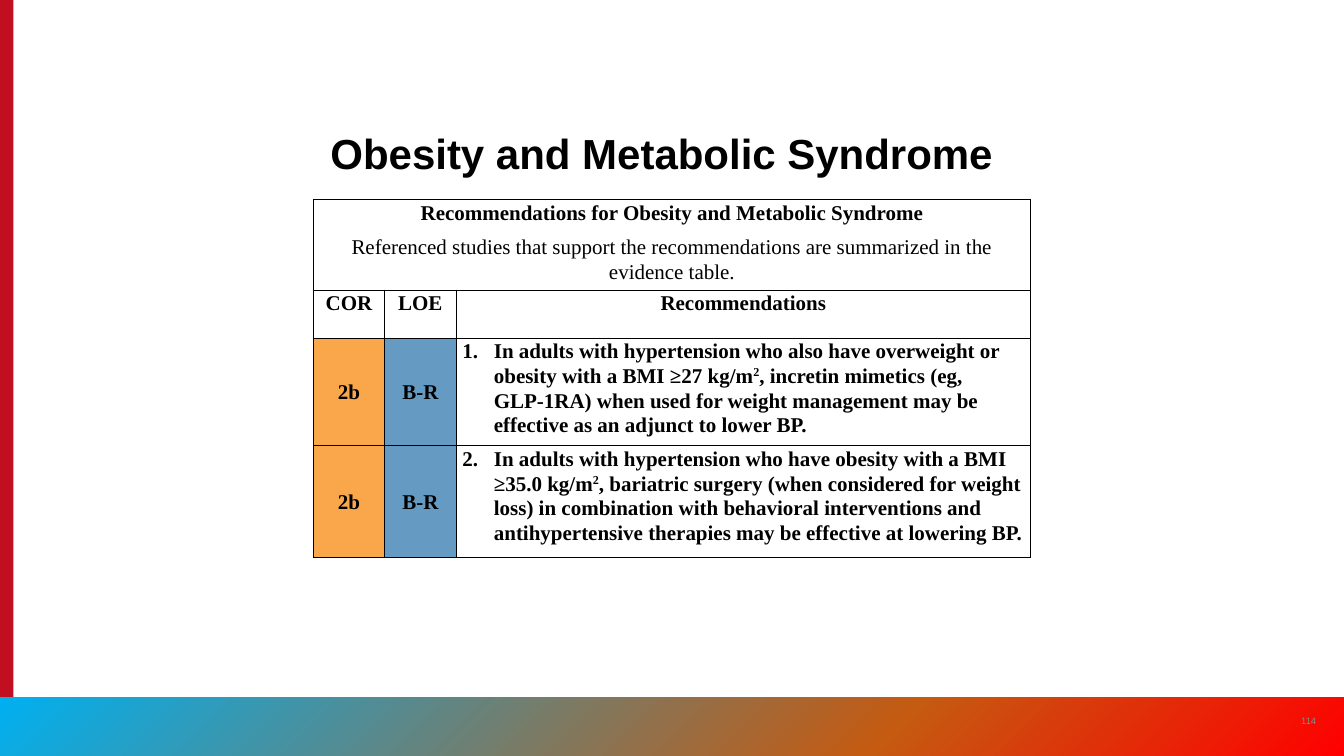
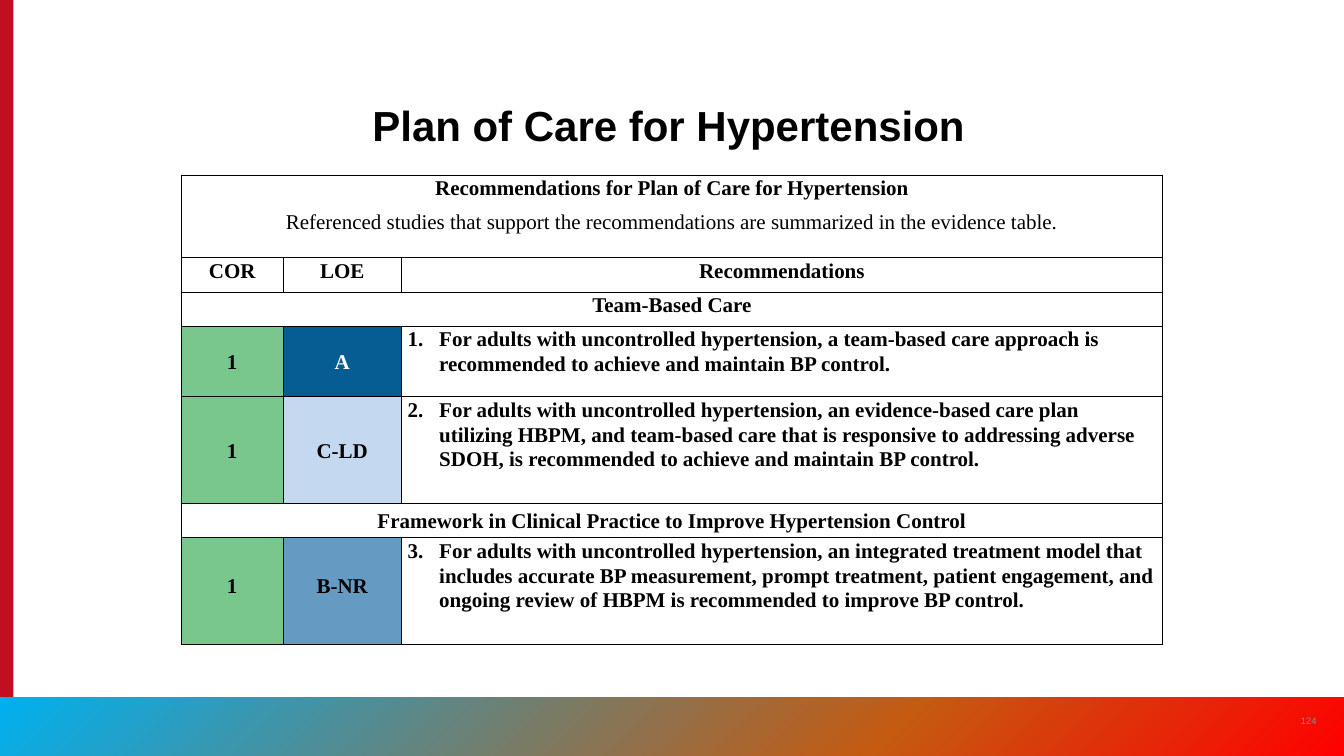
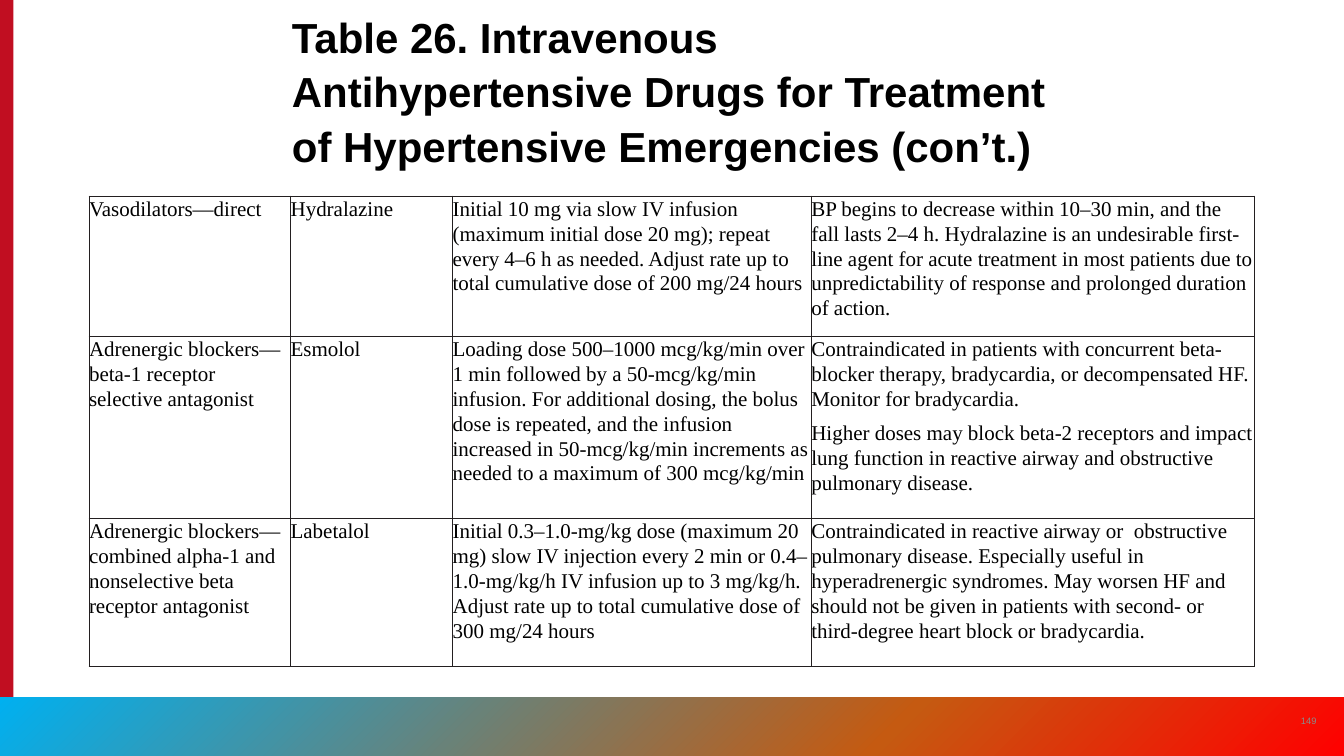
from copy import deepcopy

from lxml import etree
from pptx import Presentation
from pptx.dml.color import RGBColor
from pptx.enum.shapes import MSO_SHAPE
from pptx.enum.text import MSO_ANCHOR, MSO_AUTO_SIZE, PP_ALIGN
from pptx.oxml.ns import qn
from pptx.util import Pt

RECTANGLE = MSO_SHAPE.RECTANGLE
TOP, MIDDLE, BOTTOM = MSO_ANCHOR.TOP, MSO_ANCHOR.MIDDLE, MSO_ANCHOR.BOTTOM
LEFT, CENTER = PP_ALIGN.LEFT, PP_ALIGN.CENTER

COLORS = {
    "black": "000000", "white": "FFFFFF", "grey": "8A8B8A", "ink": "231F20",
    "side bar": "C10E21", "blue": "00B0F0", "rust": "C55A11", "red": "FF0000",
}
BAND_STOPS = [(0, "blue"), (0.66, "rust"), (1, "red")]
RATING_FILLS = {
    "1": "79C78D", "2b": "FAA74B",
    "A": "065D93", "B-R": "659BC2", "B-NR": "659BC2", "C-LD": "C4D9F0",
}
SIDE_BAR_WIDTH = 11.5
BAND_TOP = 597.6
HANGING = 27
CELL_INSET = 5.4

EVIDENCE_NOTE = "Referenced studies that support the recommendations are summarized in the evidence table."
COLUMN_HEADS = ["COR", "LOE", "Recommendations"]

recommendation_slides = [
    {
        "page": "114",
        "title": "Obesity and Metabolic Syndrome",
        "title_box": (276, 102, 600, 54),
        "origin": (268.5, 171.4),
        "columns": [61.2, 61.2, 492.5],
        "rows": [
            (75.6, TOP, 0, ["Recommendations for Obesity and Metabolic Syndrome"]),
            (41, TOP, 0, COLUMN_HEADS),
            (87.8, MIDDLE, 0, ["2b", "B-R", "In adults with hypertension who also have overweight or obesity with a BMI ≥27 kg/m^2^, incretin mimetics (eg, GLP-1RA) when used for weight management may be effective as an adjunct to lower BP."]),
            (95.8, MIDDLE, 0, ["2b", "B-R", "In adults with hypertension who have obesity with a BMI ≥35.0 kg/m^2^, bariatric surgery (when considered for weight loss) in combination with behavioral interventions and antihypertensive therapies may be effective at lowering BP."]),
        ],
    },
    {
        "page": "124",
        "title": "Plan of Care for Hypertension",
        "title_box": (312, 78, 528, 54),
        "origin": (155.5, 150),
        "columns": [87.1, 101.5, 652.3],
        "rows": [
            (71, TOP, 0, ["Recommendations for Plan of Care for Hypertension"]),
            (29.5, TOP, 0, COLUMN_HEADS),
            (29.5, TOP, 0, ["Team-Based Care"]),
            (60.2, MIDDLE, 0, ["1", "A", "For adults with uncontrolled hypertension, a team-based care approach is recommended to achieve and maintain BP control."]),
            (91.4, MIDDLE, 0, ["1", "C-LD", "For adults with uncontrolled hypertension, an evidence-based care plan utilizing HBPM, and team-based care that is responsive to addressing adverse SDOH, is recommended to achieve and maintain BP control."]),
            (29.5, MIDDLE, 0, ["Framework in Clinical Practice to Improve Hypertension Control"]),
            (91.4, MIDDLE, 10, ["1", "B-NR", "For adults with uncontrolled hypertension, an integrated treatment model that includes accurate BP measurement, prompt treatment, patient engagement, and ongoing review of HBPM is recommended to improve BP control."]),
        ],
    },
]

DRUG_ROW_HEIGHTS = [120.2, 156, 126.7]
drugs = [
    [
        ["Vasodilators—direct"],
        ["Hydralazine"],
        ["Initial 10 mg via slow IV infusion (maximum initial dose 20 mg); repeat every 4–6 h as needed. Adjust rate up to total cumulative dose of 200 mg/24 hours"],
        ["BP begins to decrease within 10–30 min, and the fall lasts 2–4 h. Hydralazine is an undesirable first-line agent for acute treatment in most patients due to unpredictability of response and prolonged duration of action."],
    ],
    [
        ["Adrenergic blockers—beta-1 receptor selective antagonist"],
        ["Esmolol"],
        ["Loading dose 500–1000 mcg/kg/min over 1 min followed by a 50-mcg/kg/min infusion. For additional dosing, the bolus dose is repeated, and the infusion increased in 50-mcg/kg/min increments as needed to a maximum of 300 mcg/kg/min"],
        [
            "Contraindicated in patients with concurrent beta-blocker therapy, bradycardia, or decompensated HF. Monitor for bradycardia.",
            "Higher doses may block beta-2 receptors and impact lung function in reactive airway and obstructive pulmonary disease.",
        ],
    ],
    [
        ["Adrenergic blockers—combined alpha-1 and nonselective beta receptor antagonist"],
        ["Labetalol"],
        ["Initial 0.3–1.0-mg/kg dose (maximum 20 mg) slow IV injection every 2 min or 0.4–1.0-mg/kg/h IV infusion up to 3 mg/kg/h. Adjust rate up to total cumulative dose of 300 mg/24 hours"],
        ["Contraindicated in reactive airway or  obstructive pulmonary disease. Especially useful in hyperadrenergic syndromes. May worsen HF and should not be given in patients with second- or third-degree heart block or bradycardia."],
    ],
]

prs = Presentation()
prs.slide_width, prs.slide_height = Pt(1152), Pt(648)


def add_table_slide(page, title_text, title_box, origin, columns, heights, border):
    slide = prs.slides.add_slide(prs.slide_layouts[5])
    title = slide.shapes.title
    title.left, title.top, title.width, title.height = map(Pt, title_box)
    frame = title.text_frame
    frame.text = title_text
    frame.auto_size = MSO_AUTO_SIZE.NONE
    frame.word_wrap = True
    frame.vertical_anchor = BOTTOM
    heading = frame.paragraphs[0]
    heading.alignment = LEFT
    heading.line_spacing = 1.08
    heading.font.name, heading.font.size, heading.font.bold = "Arial", Pt(36), True
    heading.font.color.rgb = RGBColor.from_string(COLORS["black"])

    side_bar = slide.shapes.add_shape(RECTANGLE, 0, 0, Pt(SIDE_BAR_WIDTH), Pt(648))
    side_bar.fill.solid()
    side_bar.fill.fore_color.rgb = RGBColor.from_string(COLORS["side bar"])
    band = slide.shapes.add_shape(RECTANGLE, 0, Pt(BAND_TOP), Pt(1152), Pt(648 - BAND_TOP))
    band.fill.gradient()
    band.fill.gradient_angle = 315
    stop_list = band._element.spPr.find(".//" + qn("a:gsLst"))
    stop_list.append(deepcopy(stop_list[0]))
    for stop, (position, color) in zip(band.fill.gradient_stops, BAND_STOPS):
        stop.position = position
        stop.color.rgb = RGBColor.from_string(COLORS[color])
    for decoration in (side_bar, band):
        decoration.line.fill.background()
        decoration.shadow.inherit = False

    page_box = slide.shapes.add_textbox(Pt(1104.5), Pt(600.5), Pt(34.5), Pt(34.5))
    page_box.text_frame.word_wrap = True
    page_box.text_frame.vertical_anchor = MIDDLE
    number = page_box.text_frame.paragraphs[0]
    number.text = page
    number.alignment = CENTER
    number.font.name, number.font.size = "Arial", Pt(8)
    number.font.color.rgb = RGBColor.from_string(COLORS["grey"])

    table = slide.shapes.add_table(
        len(heights), len(columns), Pt(origin[0]), Pt(origin[1]),
        Pt(sum(columns)), Pt(sum(heights))).table
    table.first_row = table.horz_banding = False
    for column, width in zip(table.columns, columns):
        column.width = Pt(width)
    for row, height in zip(table.rows, heights):
        row.height = Pt(height)
    for cell in table.iter_cells():
        properties = cell._tc.get_or_add_tcPr()
        for side in ("a:lnL", "a:lnR", "a:lnT", "a:lnB"):
            edge = etree.SubElement(properties, qn(side), w=str(Pt(1)))
            paint = etree.SubElement(edge, qn("a:solidFill"))
            etree.SubElement(paint, qn("a:srgbClr"), val=COLORS[border])
        cell.fill.background()
    return table


def write_cell(cell, lines, bold=False, alignment=LEFT, anchor=TOP, inset=0, color="black", number=None):
    cell.margin_left = cell.margin_right = Pt(inset)
    cell.margin_top = cell.margin_bottom = 0
    cell.vertical_anchor = anchor
    frame = cell.text_frame
    for index, line in enumerate(lines):
        paragraph = frame.add_paragraph() if index else frame.paragraphs[0]
        for part, text in enumerate(line.split("^")):
            run = paragraph.add_run()
            run.text = text
            if part % 2:
                run.font._element.set("baseline", "30000")
        if number:
            properties = paragraph._p.get_or_add_pPr()
            properties.set("marL", str(Pt(HANGING)))
            properties.set("indent", str(-Pt(HANGING)))
            etree.SubElement(properties, qn("a:buAutoNum"), type="arabicPeriod", startAt=str(number))
        paragraph.alignment = alignment
        paragraph.line_spacing = 1.07
        paragraph.space_after = Pt(8)
        paragraph.font.name, paragraph.font.size = "Times New Roman", Pt(18)
        paragraph.font.bold = bold and index == 0
        paragraph.font.color.rgb = RGBColor.from_string(COLORS[color])


for content in recommendation_slides:
    rows = content["rows"]
    table = add_table_slide(
        content["page"], content["title"], content["title_box"], content["origin"],
        content["columns"], [row[0] for row in rows], "black")
    number = 0
    for row_index, (height, anchor, lift, texts) in enumerate(rows):
        if len(texts) == 1:
            table.cell(row_index, 0).merge(table.cell(row_index, 2))
        rated = texts[0] in RATING_FILLS
        number += rated
        for column_index, text in enumerate(texts):
            cell = table.cell(row_index, column_index)
            if rated and column_index == 2:
                write_cell(cell, [text], True, inset=CELL_INSET, number=number)
                continue
            lines = [text] if row_index else [text, EVIDENCE_NOTE]
            write_cell(cell, lines, True, CENTER, anchor, CELL_INSET, "white" if text == "A" else "black")
            cell.margin_bottom = Pt(lift)
            if rated:
                cell.fill.solid()
                cell.fill.fore_color.rgb = RGBColor.from_string(RATING_FILLS[text])

drug_table = add_table_slide(
    "149", "Table 26. Intravenous Antihypertensive Drugs for Treatment of Hypertensive Emergencies (con’t.)",
    (243, 18, 666, 132), (76.3, 168), [172.8, 138.9, 307.4, 380.2], DRUG_ROW_HEIGHTS, "ink")
for row_index, drug in enumerate(drugs):
    for column_index, lines in enumerate(drug):
        write_cell(drug_table.cell(row_index, column_index), lines)

prs.save("out.pptx")
